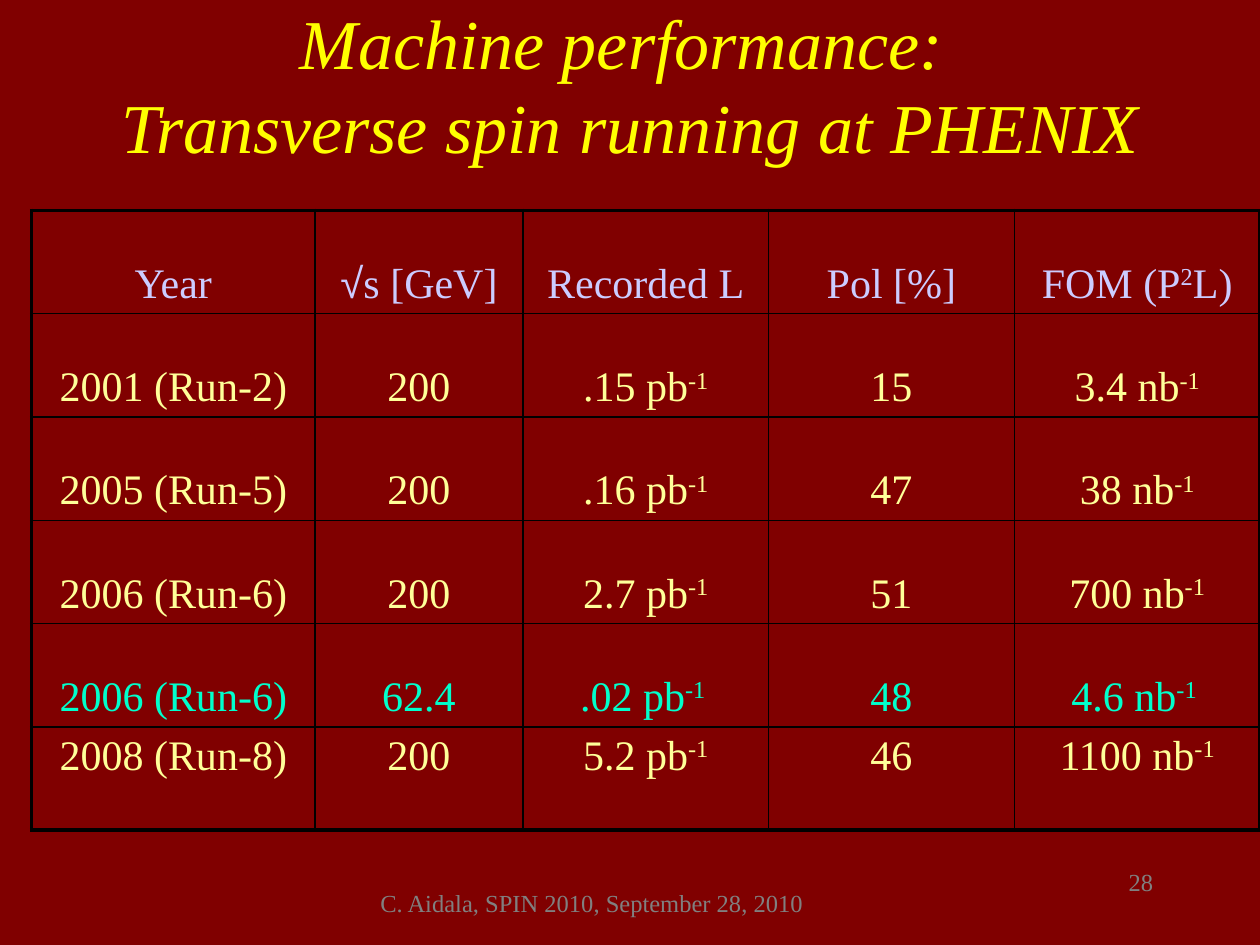
from lxml.etree import SubElement
from pptx import Presentation
from pptx.dml.color import RGBColor
from pptx.enum.text import MSO_ANCHOR as ANCHOR, MSO_AUTO_SIZE as AUTO, PP_ALIGN as ALIGN
from pptx.oxml.ns import qn
from pptx.util import Inches, Pt

MAROON = RGBColor(0x80, 0x00, 0x00)
YELLOW = RGBColor(0xFF, 0xFF, 0x00)
CREAM = RGBColor(0xFF, 0xFF, 0x99)
LAVENDER = RGBColor(0xCC, 0xCC, 0xFF)
AQUA = RGBColor(0x00, 0xFF, 0xCC)
GREY = RGBColor(0x80, 0x80, 0x80)
BLACK = RGBColor(0x00, 0x00, 0x00)
SERIF = "Times New Roman"

TITLE = ["Machine performance: ", "Transverse spin running at PHENIX"]
FOOTERS = [
    ("C. Aidala, SPIN 2010, September 28, 2010", (2.92, 7, 4.17, 0.35), ALIGN.LEFT),
    ("28", (7.17, 6.83, 2.08, 0.5), ALIGN.RIGHT),
]
# Text between carets is superscript.
ROWS = [
    (LAVENDER, ["Year", "√s [GeV]", "Recorded L", "Pol [%]", "FOM (P^2^L)"]),
    (CREAM, ["2001 (Run-2)", "200", ".15 pb^-1^", "15", "3.4 nb^-1^"]),
    (CREAM, ["2005 (Run-5)", "200", ".16 pb^-1^", "47", "38 nb^-1^"]),
    (CREAM, ["2006 (Run-6)", "200", "2.7 pb^-1^", "51", "700 nb^-1^"]),
    (AQUA, ["2006 (Run-6)", "62.4", ".02 pb^-1 ^", "48", "4.6 nb^-1 ^"]),
    (CREAM, ["2008 (Run-8)", "200", "5.2 pb^-1^", "46", "1100 nb^-1^"]),
]
COL_WIDTHS = [2.25, 1.65, 1.95, 1.95, 1.95]
ROW_HEIGHT = 0.82
THIN, THICK = 1, 2.25


def add_run(p, text, color, size, **extra):
    r = p.add_run()
    r.text = text
    for name, value in {"name": SERIF, "size": Pt(size), **extra}.items():
        setattr(r.font, name, value)
    r.font.color.rgb = color
    return r


def add_marked_text(p, text, color):
    for i, part in enumerate(text.split("^")):
        if part.startswith("√"):
            add_run(p, "√", color, 24, name="Arial")
            part = part[1:]
        if part:
            r = add_run(p, part, color, 24)
            if i % 2:
                r.font._element.set("baseline", "30000")


def set_borders(cell, widths):
    tcPr = cell._tc.get_or_add_tcPr()
    for i, (side, width) in enumerate(widths.items()):
        ln = SubElement(tcPr, qn(f"a:ln{side}"), w=str(Pt(width)))
        fill = SubElement(ln, qn("a:solidFill"))
        SubElement(fill, qn("a:srgbClr"), val=str(BLACK))
        tcPr.insert(i, ln)


prs = Presentation()
prs.slide_width, prs.slide_height = Inches(10), Inches(7.5)
s = prs.slides.add_slide(prs.slide_layouts[5])
s.background.fill.solid()
s.background.fill.fore_color.rgb = MAROON

for text, box, align in FOOTERS:
    tf = s.shapes.add_textbox(*map(Inches, box)).text_frame
    tf.word_wrap = True
    p = tf.paragraphs[0]
    p.alignment = align
    add_run(p, text, GREY, 14)

title = s.shapes.title
title.left, title.top, title.width, title.height = map(Inches, (0.25, 0.25, 9.5, 0.83))
tf = title.text_frame
tf.auto_size, tf.vertical_anchor = AUTO.NONE, ANCHOR.MIDDLE
p = tf.paragraphs[0]
p.alignment = ALIGN.CENTER
for i, line in enumerate(TITLE):
    if i:
        p.add_line_break()
    add_run(p, line, YELLOW, 40, italic=True)

last_row, last_col = len(ROWS) - 1, len(COL_WIDTHS) - 1
table = s.shapes.add_table(
    len(ROWS), len(COL_WIDTHS), Inches(0.25), Inches(1.67),
    Inches(sum(COL_WIDTHS)), Inches(ROW_HEIGHT * len(ROWS))).table
table.first_row = table.horz_banding = False
for col, width in zip(table.columns, COL_WIDTHS):
    col.width = Inches(width)

for i, (color, texts) in enumerate(ROWS):
    table.rows[i].height = Inches(ROW_HEIGHT)
    for j, text in enumerate(texts):
        cell = table.cell(i, j)
        cell.fill.background()
        cell.vertical_anchor = ANCHOR.TOP if i == last_row else ANCHOR.BOTTOM
        p = cell.text_frame.paragraphs[0]
        p.alignment = ALIGN.CENTER
        add_marked_text(p, text, color)
        edges = {"L": j == 0, "R": j == last_col, "T": i == 0, "B": i == last_row}
        set_borders(cell, {side: THICK if outer else THIN for side, outer in edges.items()})

prs.save("out.pptx")
